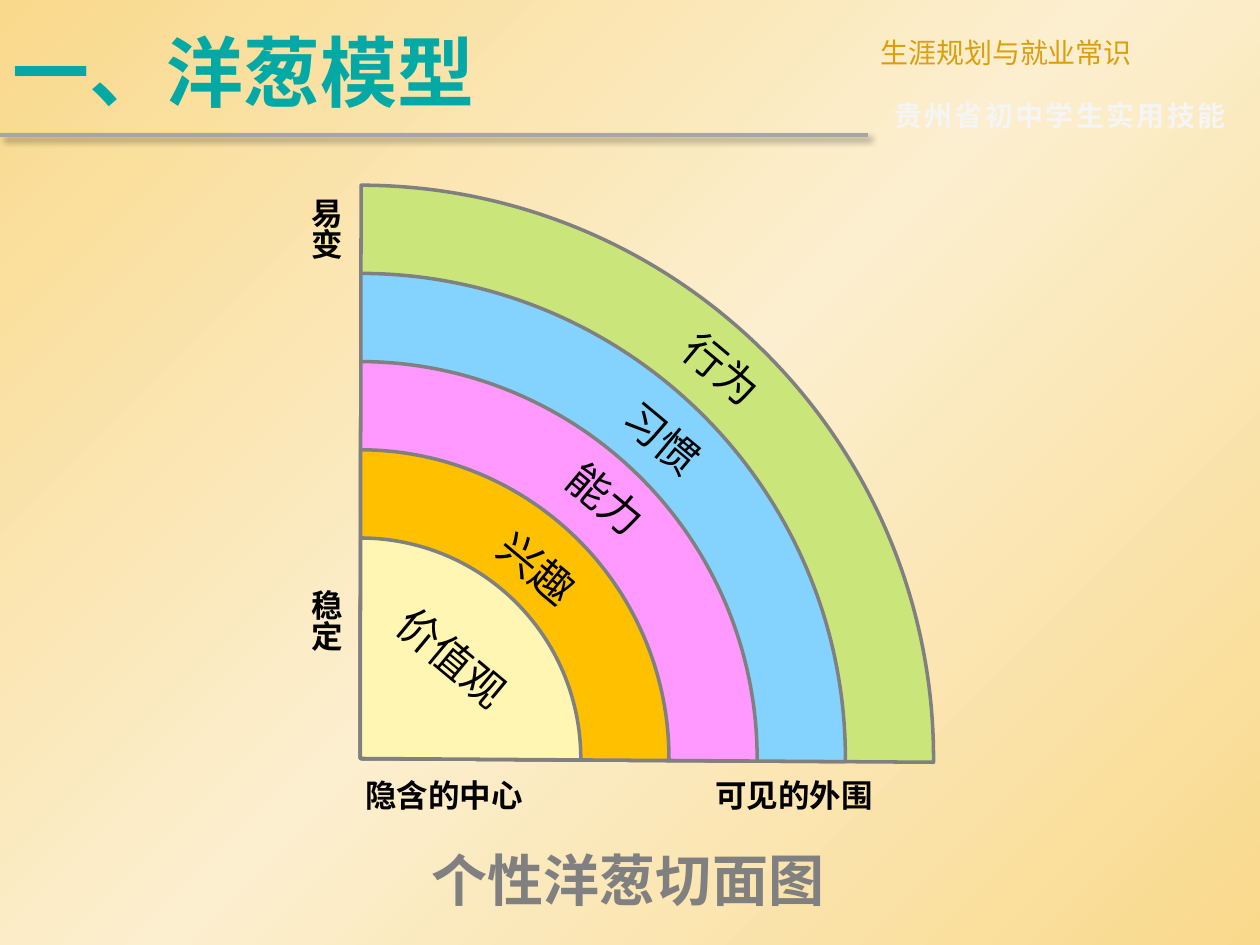
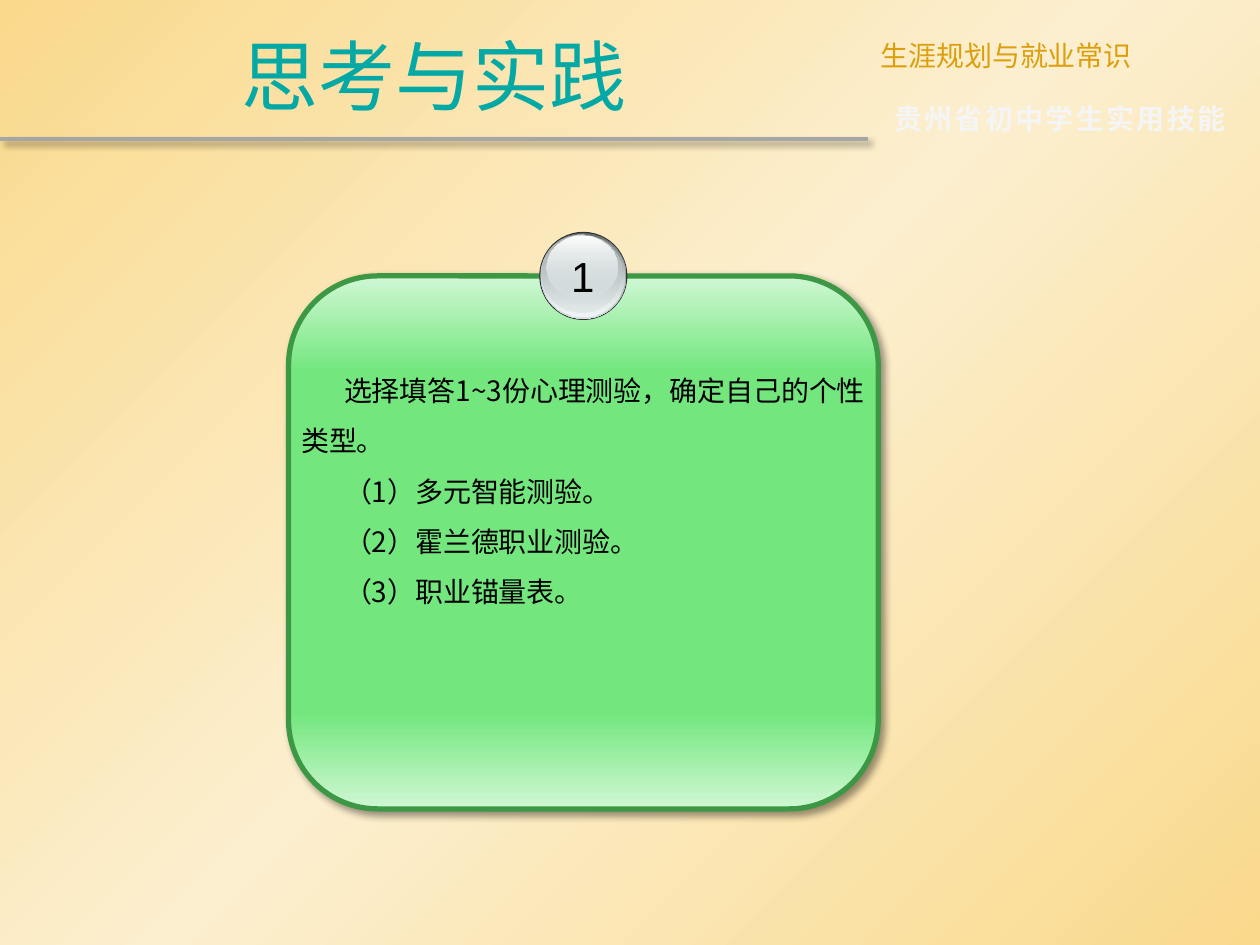
from lxml.etree import SubElement
from pptx import Presentation
from pptx.dml.color import RGBColor
from pptx.enum.shapes import MSO_CONNECTOR, MSO_SHAPE
from pptx.enum.text import MSO_ANCHOR, MSO_AUTO_SIZE, PP_ALIGN
from pptx.oxml.ns import qn
from pptx.util import Inches, Pt

FONT = "Noto Sans CJK SC"
COLORS = {
    "sand": "F9D98C", "cream": "FCEFCF", "teal": "04A8A4", "amber": "DC9F0C",
    "rule": "A6A6A6", "pale": "F5F5F5", "gray": "808080", "black": "000000",
    "behavior": "CAE67B", "habit": "83D3FE", "ability": "FF99FF",
    "interest": "FFC000", "values": "FFF6B3",
    "mint": "D0F7D4", "green": "73E77E", "forest": "3C9844",
    "rim": "333333", "slate": "636869", "steel": "AAB2B3",
    "silver": "D6E1E2", "mist": "F1F5F5", "white": "FFFFFF",
}
RINGS = [
    ("behavior", "行为", 5.3, 2.68, 0.88),
    ("habit", "习惯", 4.82, 3.23, 0.88),
    ("ability", "能力", 4.38, 3.71, 0.88),
    ("interest", "兴趣", 3.83, 4.26, 0.88),
    ("values", "价值观", 2.99, 4.97, 1.21),
]
BADGE_LAYERS = [
    (4.28, 1.84, 0.7, 0.7, "rim"),
    (4.29, 1.85, 0.68, 0.68, [(0, "slate", 100), (100, "silver", 100)]),
    (4.29, 1.85, 0.67, 0.66, [(0, "silver", 0), (100, "mist", 100)]),
    (4.3, 1.86, 0.63, 0.62, [(0, "steel", 100), (100, "silver", 48)]),
    (4.34, 1.87, 0.56, 0.5, [(0, "white", 100), (100, "silver", 38)]),
]
TASKS = [
    "选择填答1~3份心理测验，确定自己的个性类型。",
    "（1）多元智能测验。",
    "（2）霍兰德职业测验。",
    "（3）职业锚量表。",
]


def rgb(name):
    return RGBColor.from_string(COLORS[name])


def inches(*lengths):
    return [Inches(length) for length in lengths]


def paint_gradient(fill, element, stops, angle):
    fill.gradient()
    fill.gradient_angle = 360 - angle
    stop_list = next(element.iter(qn("a:gsLst")))
    for old_stop in list(stop_list):
        stop_list.remove(old_stop)
    for position, name, opacity in stops:
        stop = SubElement(stop_list, qn("a:gs"), pos=str(position * 1000))
        color = SubElement(stop, qn("a:srgbClr"), val=COLORS[name])
        if opacity < 100:
            SubElement(color, qn("a:alpha"), val=str(opacity * 1000))


def add_shadow(shape):
    properties = shape.element.spPr
    effects = properties.find(qn("a:effectLst"))
    if effects is None:
        effects = SubElement(properties, qn("a:effectLst"))
    shadow = SubElement(effects, qn("a:outerShdw"), blurRad=str(Pt(4)),
                        dist=str(Pt(3)), dir="2700000", algn="tl", rotWithShape="0")
    color = SubElement(shadow, qn("a:srgbClr"), val=COLORS["black"])
    SubElement(color, qn("a:alpha"), val="40000")


def write(para, text, size=16, color="black", bold=False, font=FONT,
          align=PP_ALIGN.LEFT, tracking=0):
    para.alignment = align
    span = para.add_run()
    span.text = text
    span.font.size = Pt(size)
    span.font.bold = bold
    span.font.color.rgb = rgb(color)
    span.font.name = font
    properties = span.font._element
    SubElement(properties, qn("a:ea"), typeface=font)
    if tracking:
        properties.set("spc", str(int(tracking * 100)))


def add_text(shapes, text, left, top, width, height, wrap=True, rotation=0,
             vertical=False, **style):
    box = shapes.add_textbox(*inches(left, top, width, height))
    box.rotation = rotation
    frame = box.text_frame
    frame.word_wrap = wrap
    if not wrap:
        frame.auto_size = MSO_AUTO_SIZE.SHAPE_TO_FIT_TEXT
    if vertical:
        frame._txBody.bodyPr.set("vert", "eaVert")
    write(frame.paragraphs[0], text, **style)


def add_figure(shapes, kind, left, top, width, height, fill, line=None, weight=0):
    figure = shapes.add_shape(kind, *inches(left, top, width, height))
    figure.shadow.inherit = False
    if isinstance(fill, str):
        figure.fill.solid()
        figure.fill.fore_color.rgb = rgb(fill)
    else:
        paint_gradient(figure.fill, figure.element, fill, 90)
    if line:
        figure.line.color.rgb = rgb(line)
        figure.line.width = Pt(weight)
    else:
        figure.line.fill.background()
    return figure


def place(shape, left, top, width, height):
    shape.left, shape.top, shape.width, shape.height = inches(left, top, width, height)


def add_header(page, title, drop=0, **style):
    heading = page.shapes.title
    place(heading, 0, 0.05 + drop, 6.89, 1.02)
    frame = heading.text_frame
    frame.auto_size = MSO_AUTO_SIZE.NONE
    frame.vertical_anchor = MSO_ANCHOR.MIDDLE
    write(frame.paragraphs[0], title, size=44, color="teal", **style)

    rule = page.shapes.add_connector(
        MSO_CONNECTOR.STRAIGHT, *inches(0, 1.07 + drop, 6.89, 1.07 + drop))
    rule.line.color.rgb = rgb("rule")
    rule.line.width = Pt(2.25)
    add_shadow(rule)

    add_text(page.shapes, "生涯规划与就业常识", 6.89, 0.23 + drop, 3.11, 0.37,
             color="amber", align=PP_ALIGN.JUSTIFY)
    add_text(page.shapes, "贵州省初中学生实用技能", 7, 0.73 + drop, 2.9, 0.37,
             wrap=False, color="pale", bold=True, tracking=1.4)


def add_onion(page):
    center_x, center_y, outer, step = 2.86, 6.02, 4.55, 0.7
    for index, (color, *_) in enumerate(RINGS):
        radius = outer - index * step
        ring = add_figure(page.shapes, MSO_SHAPE.PIE, center_x - radius,
                          center_y - radius, 2 * radius, 2 * radius,
                          color, "gray", 2)
        ring.adjustments[0] = 162.05
        ring.adjustments[1] = 0.225
    for _, label, left, top, width in RINGS:
        add_text(page.shapes, label, left, top, width, 0.5, wrap=False,
                 rotation=39.9, size=24)
    for label, left in (("隐含的中心", 2.8), ("可见的外围", 5.58)):
        add_text(page.shapes, label, left, 6.11, 1.9, 0.4, size=18, bold=True)
    for label, top in (("易变", 1.47), ("稳定", 4.58)):
        add_text(page.shapes, label, 2.29, top, 0.5, 0.8, vertical=True,
                 size=18, bold=True)


def add_task_list(body):
    place(body, 2.29, 2.78, 4.68, 2.07)
    frame = body.text_frame
    frame.auto_size = MSO_AUTO_SIZE.NONE
    for index, task in enumerate(TASKS):
        para = frame.add_paragraph() if index else frame.paragraphs[0]
        para.line_spacing = 1.5
        para.space_before = Pt(0)
        write(para, task)
        properties = para._p.get_or_add_pPr()
        properties.set("marL", "0")
        properties.set("indent", str(Inches(0.34)))
        SubElement(properties, qn("a:buNone"))


def add_badge(page, number):
    badge = page.shapes.add_group_shape()
    for *bounds, fill in BADGE_LAYERS:
        add_figure(badge.shapes, MSO_SHAPE.OVAL, *bounds, fill)
    add_text(badge.shapes, number, 4.43, 1.94, 0.39, 0.5, wrap=False,
             size=24, font="Arial", align=PP_ALIGN.CENTER)


def build_onion_page(deck):
    page = deck.slides.add_slide(deck.slide_layouts[5])
    add_header(page, "一、洋葱模型", bold=True)
    add_text(page.shapes, "个性洋葱切面图", 3.33, 6.66, 3.36, 0.64, wrap=False,
             size=32, color="gray", bold=True)
    add_onion(page)


def build_practice_page(deck):
    page = deck.slides.add_slide(deck.slide_layouts[1])
    add_header(page, "思考与实践", drop=0.03, align=PP_ALIGN.CENTER)
    stops = [(0, "mint", 100), (18, "green", 100), (82, "green", 100), (100, "mint", 100)]
    card = add_figure(page.shapes, MSO_SHAPE.ROUNDED_RECTANGLE, 2.29, 2.19, 4.68, 4.23,
                      stops, "forest", 3)
    add_shadow(card)
    body = page.placeholders[1]
    body.element.addprevious(card.element)
    add_task_list(body)
    add_badge(page, "1")


def main():
    deck = Presentation()
    deck.slide_width, deck.slide_height = inches(10, 7.5)
    master = deck.slide_master
    paint_gradient(master.background.fill, master.element,
                   [(0, "sand", 100), (50, "cream", 100), (100, "sand", 100)], 45)
    build_onion_page(deck)
    build_practice_page(deck)
    deck.save("out.pptx")


if __name__ == "__main__":
    main()
